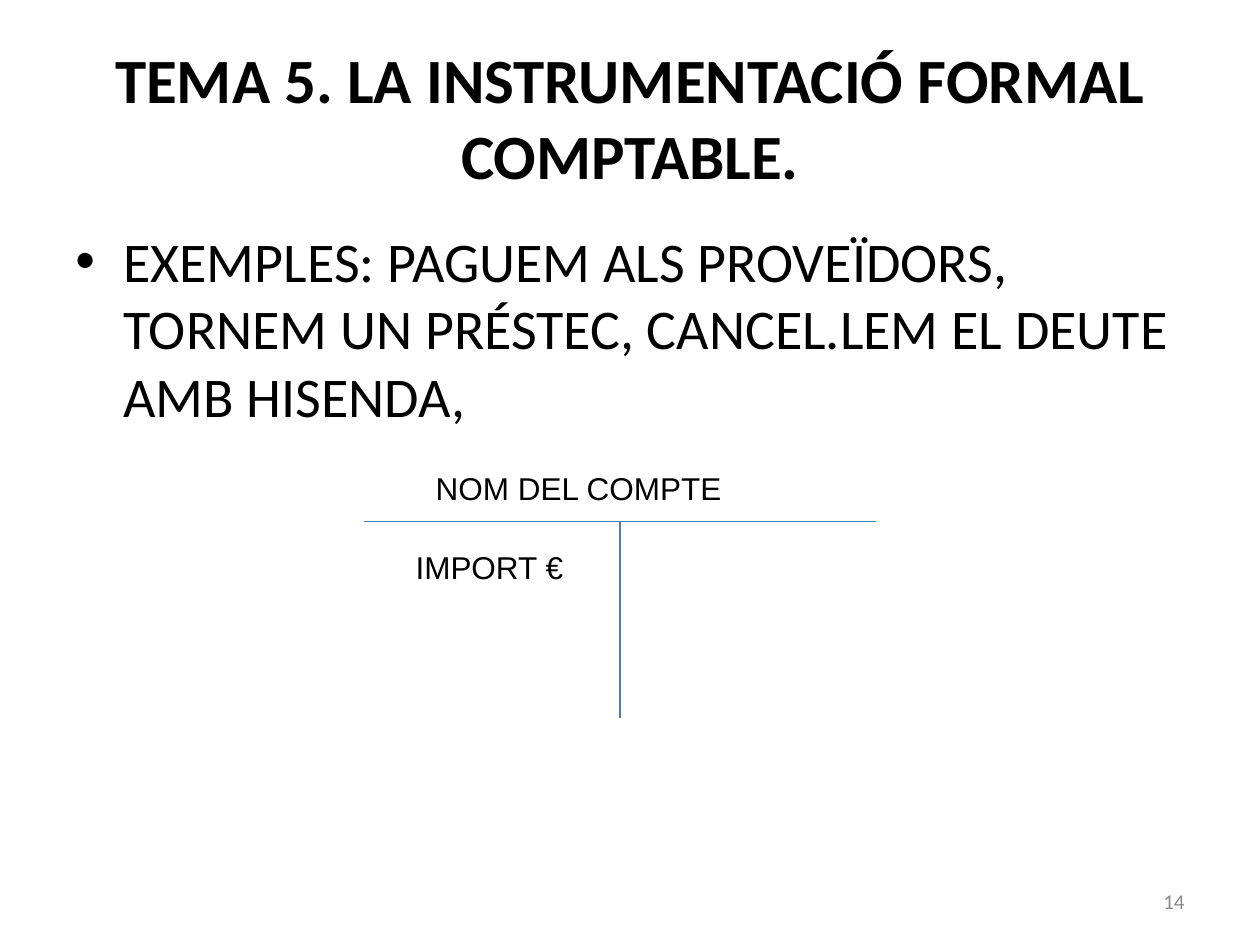
from pptx import Presentation
from pptx.dml.color import RGBColor
from pptx.enum.shapes import MSO_CONNECTOR
from pptx.enum.text import MSO_ANCHOR, PP_ALIGN
from pptx.oxml.ns import qn
from pptx.util import Inches, Pt
from lxml import etree

STRAIGHT = MSO_CONNECTOR.STRAIGHT
TOP, MIDDLE = MSO_ANCHOR.TOP, MSO_ANCHOR.MIDDLE
LEFT, CENTER, RIGHT = PP_ALIGN.LEFT, PP_ALIGN.CENTER, PP_ALIGN.RIGHT

COLORS = {"text": "000000", "number": "898989", "account": "4A7EBB"}
BLANK_LAYOUT = 6


def add_text(slide, text, left, top, width, height, size, font="Calibri",
             color="text", bold=False, align=LEFT, anchor=TOP):
    """Add a one-paragraph text box and return its paragraph."""
    frame = slide.shapes.add_textbox(
        Inches(left), Inches(top), Inches(width), Inches(height)).text_frame
    frame.word_wrap = True
    frame.vertical_anchor = anchor
    paragraph = frame.paragraphs[0]
    paragraph.alignment = align
    run = paragraph.add_run()
    run.text = text
    run.font.name = font
    run.font.size = Pt(size)
    run.font.bold = bold
    run.font.color.rgb = RGBColor.from_string(COLORS[color])
    return paragraph


def add_bullet(paragraph, indent):
    properties = paragraph._p.get_or_add_pPr()
    properties.set("marL", str(Inches(indent)))
    properties.set("indent", str(-Inches(indent)))
    etree.SubElement(properties, qn("a:buFont"), typeface="Arial")
    etree.SubElement(properties, qn("a:buChar"), char="•")


def add_line(slide, x1, y1, x2, y2):
    line = slide.shapes.add_connector(
        STRAIGHT, Inches(x1), Inches(y1), Inches(x2), Inches(y2))
    line.line.color.rgb = RGBColor.from_string(COLORS["account"])
    line.line.width = Pt(0.75)
    etree.SubElement(line._element.spPr, qn("a:effectLst"))


def add_t_account(slide, left, top, width, height):
    """Draw the T of a ledger account: a bar with a stem at its middle."""
    middle = left + width / 2
    add_line(slide, left, top, left + width, top)
    add_line(slide, middle, top, middle, top + height)


def main():
    presentation = Presentation()
    presentation.slide_width = Inches(10)
    presentation.slide_height = Inches(7.5)
    slide = presentation.slides.add_slide(
        presentation.slide_layouts[BLANK_LAYOUT])

    add_text(slide, "TEMA 5. LA INSTRUMENTACIÓ FORMAL COMPTABLE.",
             0.5, 0.3, 9, 1.25, 36, bold=True, align=CENTER, anchor=MIDDLE)
    examples = add_text(
        slide, "EXEMPLES: PAGUEM ALS PROVEÏDORS, TORNEM UN PRÉSTEC, "
        "CANCEL.LEM EL DEUTE AMB HISENDA,", 0.5, 1.75, 9, 4.95, 32)
    add_bullet(examples, 0.38)
    add_text(slide, "14", 7.17, 6.95, 2.33, 0.4, 12, color="number",
             align=RIGHT, anchor=MIDDLE)

    add_t_account(slide, 2.89, 4.14, 4.06, 1.56)
    add_text(slide, "NOM DEL COMPTE", 3.36, 3.67, 3.12, 0.4, 18, font="Arial")
    add_text(slide, "IMPORT €", 3.2, 4.3, 1.56, 0.4, 18, font="Arial")

    presentation.save("out.pptx")


if __name__ == "__main__":
    main()
